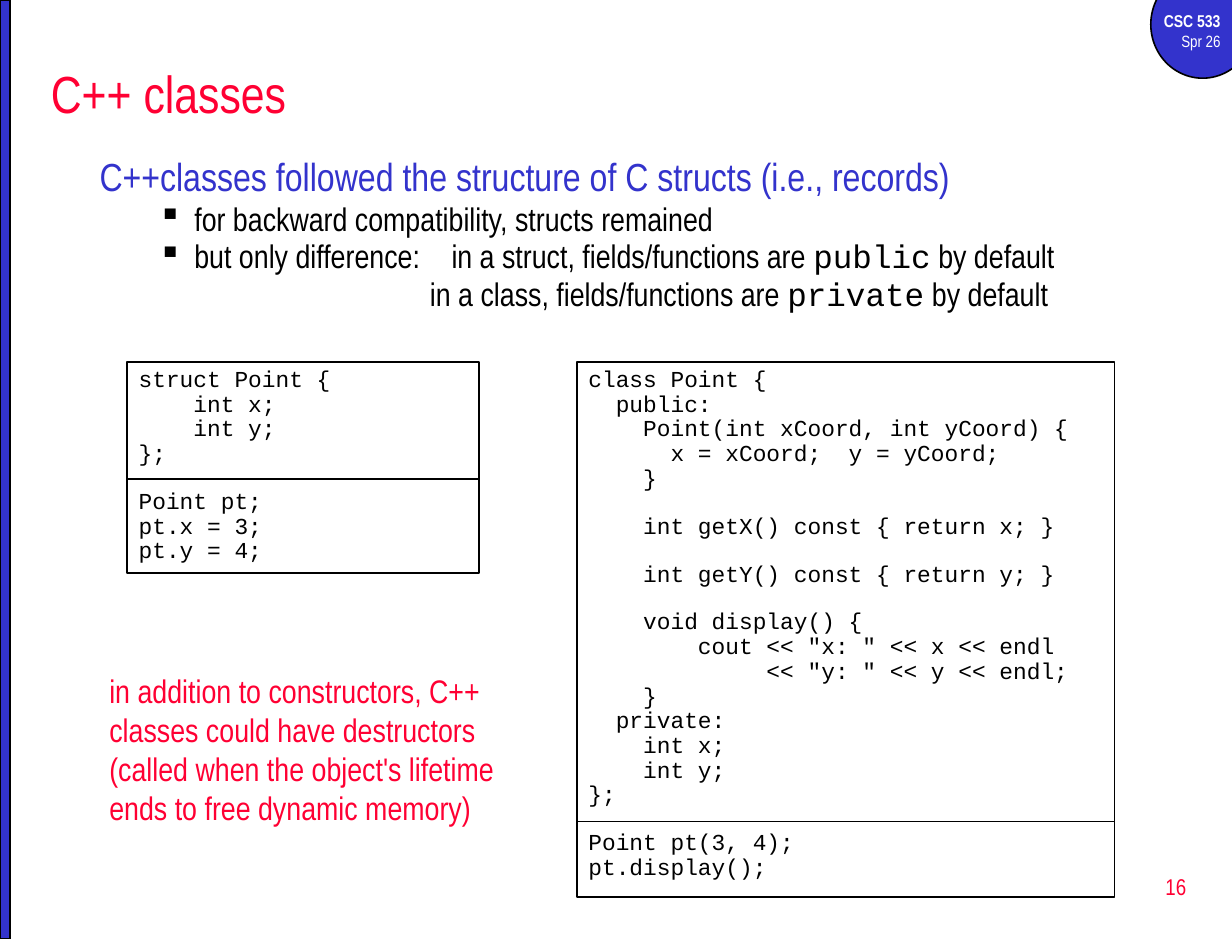
from lxml.etree import SubElement
from pptx import Presentation
from pptx.dml.color import RGBColor
from pptx.enum.shapes import MSO_CONNECTOR as LINE, MSO_SHAPE as SHAPE
from pptx.enum.text import MSO_ANCHOR as ANCHOR, PP_ALIGN as ALIGN
from pptx.oxml.ns import qn
from pptx.util import Pt

PX = 7620
COL = {"red": "FF0033", "blue": "3333CC", "black": "000000", "white": "FFFFFF"}
SANS, MONO = "Arial Narrow", "Courier New"

STRUCT = """struct Point {
    int x;
    int y;
};"""
STRUCT_USE = """Point pt;
pt.x = 3;
pt.y = 4;"""
CLASS = """class Point {
  public:
    Point(int xCoord, int yCoord) {
      x = xCoord;  y = yCoord;
    }

    int getX() const { return x; }

    int getY() const { return y; }

    void display() {
        cout << "x: " << x << endl
             << "y: " << y << endl;
    }
  private:
    int x;
    int y;
};"""
CLASS_USE = """Point pt(3, 4);
pt.display();"""
POINTS = [
    (97, -37, [("for backward compatibility, structs remained", SANS)]),
    (97, -37, [("but only difference:\tin a struct, fields/functions are ", SANS),
               ("public", MONO), (" by default", SANS)]),
    (338, 0, [("in a class, fields/functions are ", SANS),
              ("private", MONO), (" by default", SANS)]),
]


def emu(*box):
    """Turn px lengths into EMU."""
    return [n * PX for n in box]


def rgb(name):
    """Look up a colour by name."""
    return RGBColor.from_string(COL[name])


def style(font, size, col, face=SANS, bold=False):
    """Set the look of a font."""
    font.size, font.name, font.bold = Pt(size), face, bold
    font.color.rgb = rgb(col)


def frame(slide, box, anchor=ANCHOR.TOP):
    """Add a wrapping text box and return its text frame."""
    text = slide.shapes.add_textbox(*emu(*box)).text_frame
    text.word_wrap, text.vertical_anchor = True, anchor
    return text


def write(par, words, size, col, face=SANS, align=ALIGN.LEFT, bold=False):
    """Fill a paragraph with text of one style."""
    par.text, par.alignment = words, align
    style(par.font, size, col, face, bold)


def block(slide, kind, box, fill=None):
    """Add a black-edged shape, filled or clear."""
    shape = slide.shapes.add_shape(kind, *emu(*box))
    shape.shadow.inherit = False
    if fill:
        shape.fill.solid()
        shape.fill.fore_color.rgb = rgb(fill)
    else:
        shape.fill.background()
    shape.line.color.rgb, shape.line.width = rgb("black"), Pt(1)
    return shape


def badge(slide, x, y):
    """Draw the course badge in the corner."""
    block(slide, SHAPE.OVAL, (x, y, 106, 110), "blue")
    text = frame(slide, (x - 17, y + 35, 100, 55))
    write(text.paragraphs[0], "CSC 533", 10.5, "white", align=ALIGN.RIGHT, bold=True)
    write(text.add_paragraph(), "Spr 26", 10, "white", align=ALIGN.RIGHT)


def head(slide, box):
    """Place and style the title."""
    title = slide.shapes.title
    title.left, title.top, title.width, title.height = emu(*box)
    title.text_frame.vertical_anchor = ANCHOR.MIDDLE
    write(title.text_frame.paragraphs[0], "C++ classes", 32, "red")


def body(slide, box):
    """Write the lead line and its points."""
    text = frame(slide, box)
    write(text.paragraphs[0],
          "C++classes followed the structure of C structs (i.e., records)", 24, "blue")
    for left, dent, runs in POINTS:
        par = text.add_paragraph()
        props = par._p.get_or_add_pPr()
        props.set("marL", str(left * PX))
        props.set("indent", str(dent * PX))
        if dent:
            SubElement(props, qn("a:buChar"), char="▪")
        par.line_spacing, par.space_before = 0.8, Pt(4)
        for words, face in runs:
            run = par.add_run()
            run.text = words
            style(run.font, 20, "black", face)


def code(slide, box, split, *parts):
    """Draw a code box whose two parts are split by a rule."""
    x, y, wide, _ = box
    text = block(slide, SHAPE.RECTANGLE, box).text_frame
    text.word_wrap, text.vertical_anchor = True, ANCHOR.TOP
    par, gap = text.paragraphs[0], 0
    for line in "\n\n".join(parts).split("\n"):
        if not line:
            gap = 14.3
            continue
        par = text.add_paragraph() if par.text else par
        write(par, line, 14, "black", MONO)
        par.line_spacing, par.space_before = 0.9, Pt(gap)
        gap = 0
    rule = slide.shapes.add_connector(
        LINE.STRAIGHT, *emu(x, y + split, x + wide, y + split))
    rule.line.color.rgb, rule.line.width = rgb("black"), Pt(1)
    SubElement(rule._element.spPr, qn("a:effectLst"))


def note(slide, box):
    """Write the remark on destructors."""
    write(frame(slide, box).paragraphs[0],
          "in addition to constructors, C++ classes could have destructors "
          "(called when the object's lifetime ends to free dynamic memory)", 20, "red")


def folio(slide, box):
    """Write the page number."""
    text = frame(slide, box, ANCHOR.MIDDLE)
    write(text.paragraphs[0], "16", 14, "red", align=ALIGN.RIGHT)


def main():
    """Build and save the slide."""
    deck = Presentation()
    deck.slide_width, deck.slide_height = emu(1260, 960)
    slide = deck.slides.add_slide(deck.slide_layouts[5])
    badge(slide, 1177, -30)
    block(slide, SHAPE.RECTANGLE, (0, 0, 10, 960), "blue")
    folio(slide, (962, 875, 263, 63))
    head(slide, (40, 50, 1190, 90))
    body(slide, (90, 150, 1142, 260))
    code(slide, (130, 370, 360, 216), 120, STRUCT, STRUCT_USE)
    code(slide, (590, 370, 550, 547), 470, CLASS, CLASS_USE)
    note(slide, (100, 680, 450, 174))
    deck.save("out.pptx")


if __name__ == "__main__":
    main()
